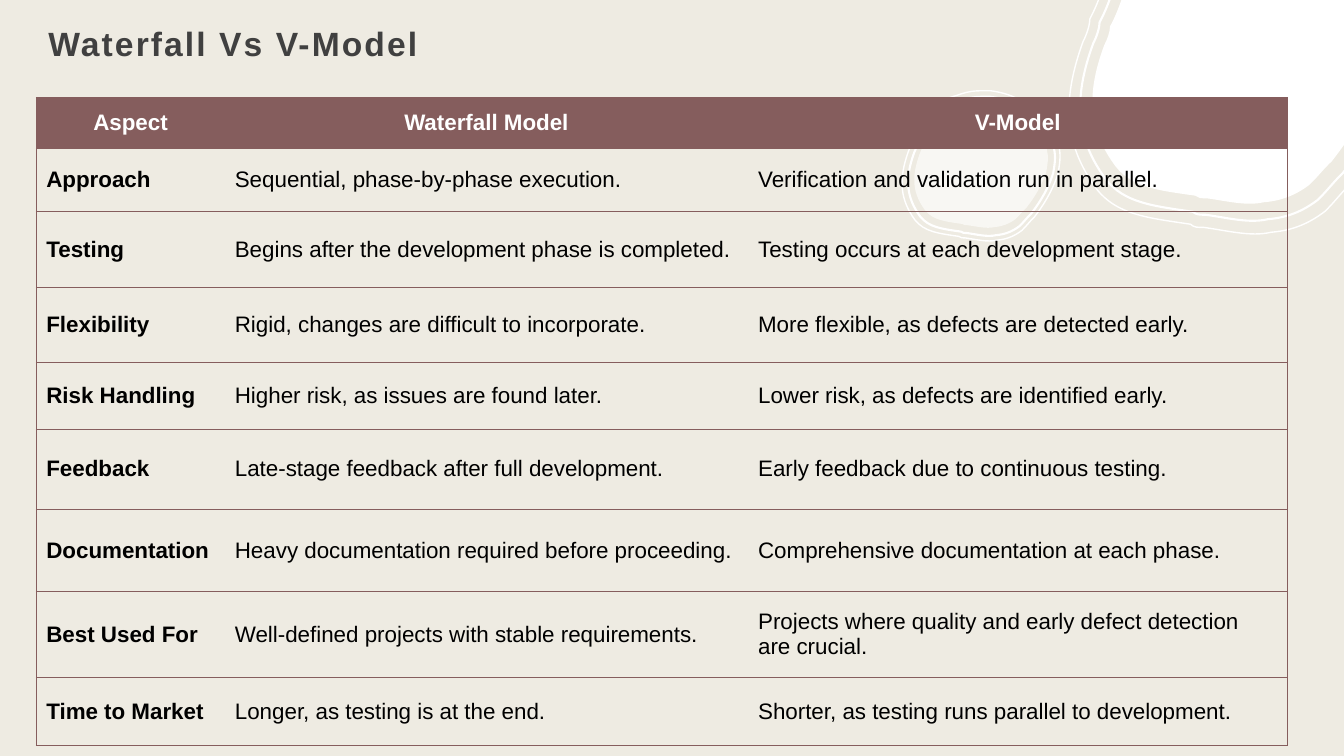
from lxml import etree
from pptx import Presentation, util as u
from pptx.dml.color import RGBColor
from pptx.enum import text as t
from pptx.oxml import ns

WIDE, HIGH = 13.33, 7.5
FONT = "Arial"
HUE = {"paper": "EEEBE2", "wine": "855D5D", "white": "FFFFFF",
       "ink": "000000", "title": "404040"}

CURVES = [
    (52, 0, 54, 0, 56, 0), (63, 1, 70, 3, 76, 7),
    (82, 10, 88, 15, 92, 20), (96, 25, 98, 31, 99.5, 37),
    (101, 43, 100, 49, 99, 55), (96, 65, 91, 74.5, 84, 84),
    (81, 87, 79, 90, 76, 93), (71, 97, 66, 99, 60, 99.5),
    (54, 101, 47, 99, 40, 98), (38, 98, 37, 98, 36, 97),
    (23, 95, 14, 94, 8, 86), (-1, 73, -3, 60, 4, 40),
    (5, 38, 6, 35, 6, 33), (10, 23, 11, 18, 16, 13),
    (22, 8, 28, 5, 35, 3), (40, 1, 45, 0, 50, 0),
]
CUT = 23
WHOLE = (0, (50, 0), CURVES)
OPEN = (CUT, (94, CUT),
        [(96.5, 27, 98.5, 32, 99.5, 37), *CURVES[4:13], (8, 29, 9, 26, 10, CUT)])

PEBBLES = [
    ((10.84, 0, 2.82, 2.02), OPEN, {"fill": "white"}),
    ((10.72, -0.07, 3.09, 2.26), OPEN, {"line": 1.5}),
    ((10.61, -0.13, 3.33, 2.45), OPEN, {"line": 1}),
    ((9.01, 0.96, 1.45, 1.38), WHOLE, {"line": 1.5}),
    ((8.95, 0.9, 1.56, 1.49), WHOLE, {"line": 1}),
    ((9.07, 1.03, 1.32, 1.23), WHOLE, {"fill": "white", "alpha": 60}),
]

COLS = [1.87, 5.19, 5.35]
ROWS = [0.5, 0.63, 0.75, 0.75, 0.66, 0.79, 0.82, 0.85, 0.68]
DATA = [
    ("Aspect", "Waterfall Model", "V-Model"),
    ("Approach", "Sequential, phase-by-phase execution.",
     "Verification and validation run in parallel."),
    ("Testing", "Begins after the development phase is completed.",
     "Testing occurs at each development stage."),
    ("Flexibility", "Rigid, changes are difficult to incorporate.",
     "More flexible, as defects are detected early."),
    ("Risk Handling", "Higher risk, as issues are found later.",
     "Lower risk, as defects are identified early."),
    ("Feedback", "Late-stage feedback after full development.",
     "Early feedback due to continuous testing."),
    ("Documentation", "Heavy documentation required before proceeding.",
     "Comprehensive documentation at each phase."),
    ("Best Used For", "Well-defined projects with stable requirements.",
     "Projects where quality and early defect detection are crucial."),
    ("Time to Market", "Longer, as testing is at the end.",
     "Shorter, as testing runs parallel to development."),
]


def rgb(name):
    """Return the named colour."""
    return RGBColor.from_string(HUE[name])


def write(frame, words, size=16, color="ink", bold=False, align="LEFT", space=0):
    """Put formatted words into a text frame."""
    para = frame.paragraphs[0]
    para.alignment = getattr(t.PP_ALIGN, align)
    run = para.add_run()
    run.text = words
    run.font.name, run.font.size, run.font.bold = FONT, u.Pt(size), bold
    run.font.color.rgb = rgb(color)
    if space:
        run.font._element.set("spc", str(int(space * 100)))


def trace(slide, box, form):
    """Draw a form made of Bezier curves so that it fits a box."""
    top, start, curves = form
    left, head, wide, high = map(u.Inches, box)
    spots = [start] + [c[i:i + 2] for c in curves for i in (0, 2, 4)]
    spots = [(int(x / 100 * wide), int((y - top) / (100 - top) * high))
             for x, y in spots]
    pen = slide.shapes.build_freeform(*spots[0])
    pen.add_line_segments(spots[1:], close=True)
    shape = pen.convert_to_shape()
    shape.left, shape.top, shape.width, shape.height = left, head, wide, high
    route = next(shape._element.iter(ns.qn("a:path")))
    route.set("w", str(wide))
    route.set("h", str(high))
    for node, (x, y) in zip(list(route.iter(ns.qn("a:pt"))), spots):
        node.set("x", str(x))
        node.set("y", str(y))
    lines = route.findall(ns.qn("a:lnTo"))
    for i in range(0, len(lines), 3):
        bend = etree.Element(ns.qn("a:cubicBezTo"))
        lines[i].addprevious(bend)
        for line in lines[i:i + 3]:
            bend.append(line[0])
            route.remove(line)
    return shape


def pebble(slide, box, form, fill=None, line=None, alpha=None):
    """Draw one pebble, filled or as a ring."""
    shape = trace(slide, box, form)
    shape.shadow.inherit = False
    if fill:
        shape.fill.solid()
        shape.fill.fore_color.rgb = rgb(fill)
    else:
        shape.fill.background()
    if alpha:
        tint = next(shape._element.spPr.iter(ns.qn("a:srgbClr")))
        etree.SubElement(tint, ns.qn("a:alpha"), val=str(alpha * 1000))
    if line:
        shape.line.color.rgb = rgb("white")
        shape.line.width = u.Pt(line)
    else:
        shape.line.fill.background()


def heading(slide, box):
    """Place the slide title."""
    title = slide.shapes.title
    title.left, title.top, title.width, title.height = map(u.Inches, box)
    frame = title.text_frame
    frame.word_wrap = True
    frame.auto_size = t.MSO_AUTO_SIZE.NONE
    frame.vertical_anchor = t.MSO_ANCHOR.BOTTOM
    frame.margin_left = frame.margin_right = frame.margin_top = u.Inches(0.12)
    frame.margin_bottom = u.Inches(0.09)
    write(frame, "Waterfall Vs V-Model", size=24, color="title", bold=True, space=1.5)


def border(cell, sides):
    """Rule the given sides of a cell and clear the others."""
    props = cell._tc.get_or_add_tcPr()
    for spot, side in enumerate("LRTB"):
        edge = etree.Element(ns.qn("a:ln" + side), w=str(u.Pt(0.75)))
        if side in sides:
            ink = etree.SubElement(edge, ns.qn("a:solidFill"))
            etree.SubElement(ink, ns.qn("a:srgbClr"), val=HUE["wine"])
        else:
            etree.SubElement(edge, ns.qn("a:noFill"))
        props.insert(spot, edge)


def matrix(slide, left, top):
    """Place the comparison table."""
    size = (left, top, sum(COLS), sum(ROWS))
    table = slide.shapes.add_table(len(ROWS), len(COLS), *map(u.Inches, size)).table
    table.horz_banding = False
    for col, wide in zip(table.columns, COLS):
        col.width = u.Inches(wide)
    for i, (row, high) in enumerate(zip(table.rows, ROWS)):
        row.height = u.Inches(high)
        for j, cell in enumerate(row.cells):
            cell.vertical_anchor = t.MSO_ANCHOR.MIDDLE
            if i:
                cell.fill.background()
                write(cell.text_frame, DATA[i][j], bold=j == 0)
            else:
                cell.fill.solid()
                cell.fill.fore_color.rgb = rgb("wine")
                write(cell.text_frame, DATA[i][j], color="white", bold=True,
                      align="CENTER")
            border(cell, "TB" + {0: "L", len(COLS) - 1: "R"}.get(j, ""))


def main():
    """Build and save the slide."""
    deck = Presentation()
    deck.slide_width, deck.slide_height = u.Inches(WIDE), u.Inches(HIGH)
    slide = deck.slides.add_slide(deck.slide_layouts[5])
    slide.background.fill.solid()
    slide.background.fill.fore_color.rgb = rgb("paper")
    for box, form, look in PEBBLES:
        pebble(slide, box, form, **look)
    heading(slide, (0.36, 0.1, 7.98, 0.62))
    matrix(slide, 0.36, 0.97)
    deck.save("out.pptx")


if __name__ == "__main__":
    main()
